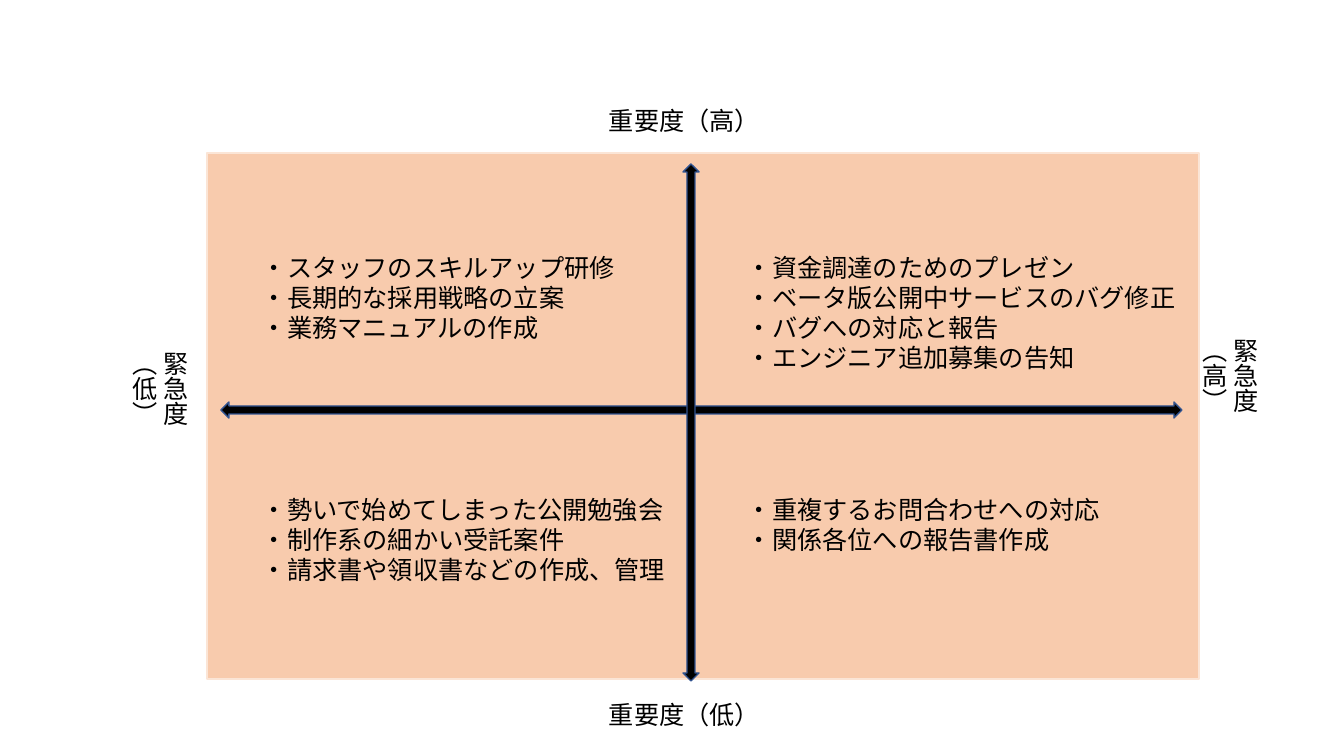
from lxml.etree import SubElement
from pptx import Presentation
from pptx.dml.color import RGBColor
from pptx.enum.shapes import MSO_SHAPE as Shape
from pptx.enum.text import MSO_AUTO_SIZE as AutoSize
from pptx.oxml.ns import qn
from pptx.util import Emu, Pt

PX = 914400 / 100.8
FONT = "Noto Sans CJK JP"
UPPER, LOWER = 247, 489
LEFT, RIGHT = 252, 737

TASKS = [
    (LEFT, UPPER, 407, ["・スタッフのスキルアップ研修", "・長期的な採用戦略の立案", "・業務マニュアルの作成"]),
    (LEFT, LOWER, 448, ["・勢いで始めてしまった公開勉強会", "・制作系の細かい受託案件", "・請求書や領収書などの作成、管理"]),
    (RIGHT, UPPER, 462, ["・資金調達のためのプレゼン", "・ベータ版公開中サービスのバグ修正",
                         "・バグへの対応と報告", "・エンジニア追加募集の告知"]),
    (RIGHT, LOWER, 462, ["・重複するお問合わせへの対応", "・関係各位への報告書作成"]),
]


def px(*lengths):
    return [Emu(round(length * PX)) for length in lengths]


def color(value):
    return RGBColor.from_string(value)


def add_block(slide, kind, box, fill, outline):
    block = slide.shapes.add_shape(kind, *px(*box))
    block.shadow.inherit = False
    block.fill.solid()
    block.fill.fore_color.rgb = color(fill)
    block.line.color.rgb = color(outline)
    block.line.width = Pt(1)


def add_words(slide, box, lines, vertical=False):
    frame = slide.shapes.add_textbox(*px(*box)).text_frame
    frame.word_wrap = True
    frame.auto_size = AutoSize.SHAPE_TO_FIT_TEXT
    if vertical:
        frame._txBody.bodyPr.set("vert", "eaVert")
    frame.text = "\n".join(lines)
    for paragraph in frame.paragraphs:
        for run in paragraph.runs:
            run.font.size = Pt(18)
            run.font.name = FONT
            run.font.color.rgb = color("000000")
            SubElement(run._r.get_or_add_rPr(), qn("a:ea"), typeface=FONT)


def add_matrix(slide, left, top, width, height):
    add_block(slide, Shape.RECTANGLE, (left, top, width, height), "F8CBAD", "FBE5D6")
    add_block(slide, Shape.LEFT_RIGHT_ARROW, (left + 14, top + 249, width - 31, 16), "000000", "325491")
    add_block(slide, Shape.UP_DOWN_ARROW, (left + 476, top + 11, 16, height - 9), "000000", "325491")


def add_axis_labels(slide, left, top, width, height):
    add_words(slide, (left + 392, top - 53, 184, 40), ["重要度（高）"])
    add_words(slide, (left + 392, top + height + 15, 184, 40), ["重要度（低）"])
    add_words(slide, (left + width + 16, top + 175, 50, 165), ["緊急度（高）"], vertical=True)
    add_words(slide, (left - 62, top + 188, 50, 165), ["緊急度（低）"], vertical=True)


def add_tasks(slide):
    for left, top, width, lines in TASKS:
        add_words(slide, (left, top, width, 10 + 30 * len(lines)), lines)


def main():
    deck = Presentation()
    deck.slide_width, deck.slide_height = px(1344, 756)
    slide = deck.slides.add_slide(deck.slide_layouts[6])
    matrix = (207, 153, 992, 526)
    add_matrix(slide, *matrix)
    add_axis_labels(slide, *matrix)
    add_tasks(slide)
    deck.save("out.pptx")


if __name__ == "__main__":
    main()
